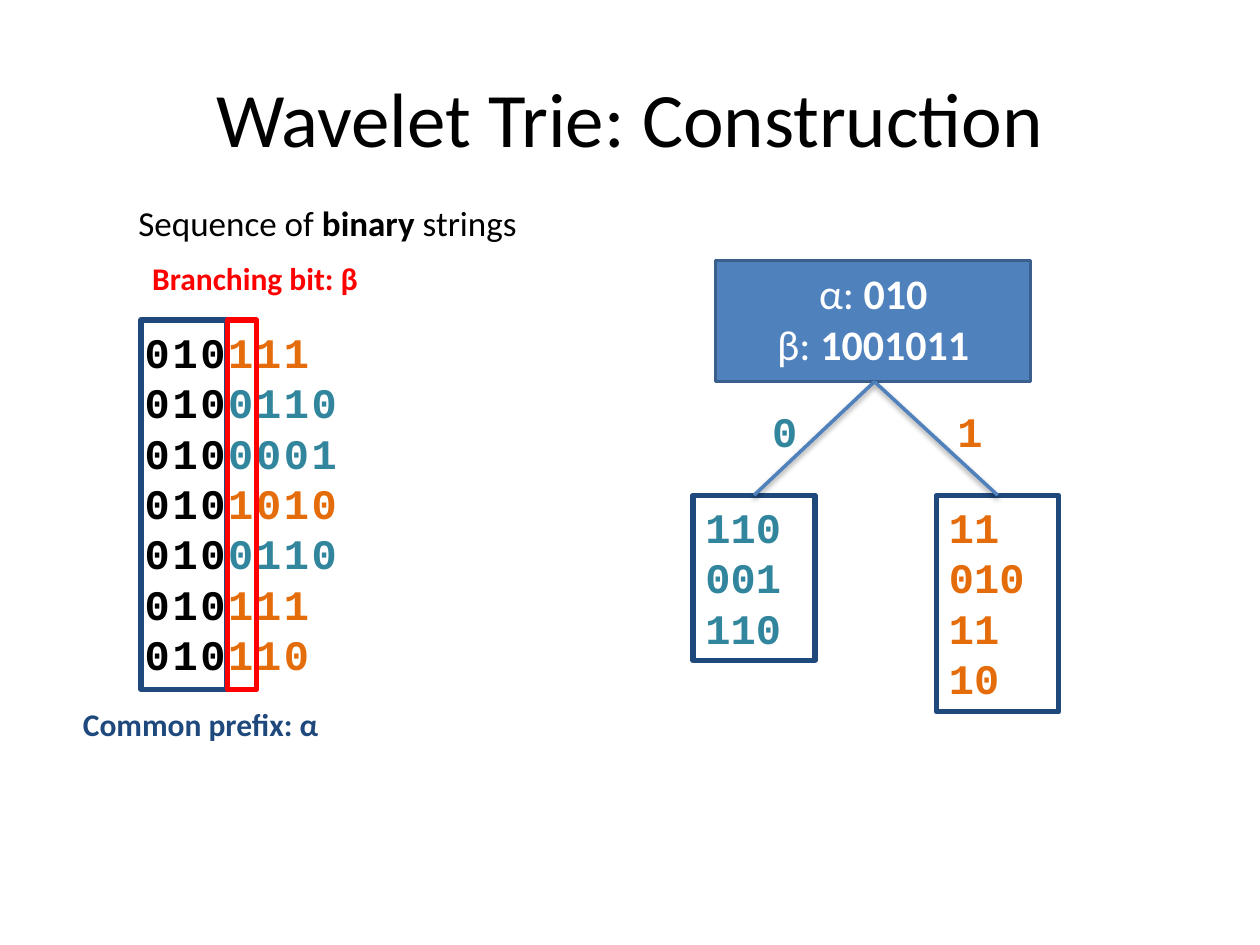
import pptx
import pptx.dml.color
import pptx.enum.shapes
import pptx.enum.text
import pptx.oxml
import pptx.oxml.ns
import pptx.util

Pt = pptx.util.Pt
RGBColor = pptx.dml.color.RGBColor
ALIGN = pptx.enum.text.PP_ALIGN
ANCHOR = pptx.enum.text.MSO_ANCHOR
AUTO_SIZE = pptx.enum.text.MSO_AUTO_SIZE

BLACK = RGBColor(0x00, 0x00, 0x00)
WHITE = RGBColor(0xFF, 0xFF, 0xFF)
RED = RGBColor(0xFF, 0x00, 0x00)
NAVY = RGBColor(0x1F, 0x49, 0x7D)
BLUE = RGBColor(0x4F, 0x81, 0xBD)
DARK_BLUE = RGBColor(0x3A, 0x5F, 0x8C)
TEAL = RGBColor(0x31, 0x85, 0x9C)
ORANGE = RGBColor(0xE4, 0x6C, 0x0A)
BIT_COLORS = {"0": TEAL, "1": ORANGE}

BITS = {"name": "Courier New", "size": Pt(24), "bold": True}
CAPTION = {"name": "Calibri", "size": Pt(18), "bold": True}
HEADING = {"name": "Calibri", "size": Pt(20), "bold": False}
NODE = {"name": "Calibri", "size": Pt(24), "bold": False}
TITLE = {"name": "Calibri", "size": Pt(44), "bold": False}

STRINGS = ["010111", "0100110", "0100001", "0101010", "0100110", "010111", "010110"]
PREFIX = "010"

LINE_SHADOW = (
    f'<a:effectLst {pptx.oxml.ns.nsdecls("a")}>'
    '<a:outerShdw blurRad="40000" dist="20000" dir="5400000" rotWithShape="0">'
    '<a:srgbClr val="000000"><a:alpha val="38000"/></a:srgbClr>'
    '</a:outerShdw></a:effectLst>'
)


def write(shape, paragraphs, font_format, align=ALIGN.LEFT, spacing=None, **frame_format):
    frame = shape.text_frame
    settings = {"word_wrap": True, "auto_size": AUTO_SIZE.SHAPE_TO_FIT_TEXT,
                "vertical_anchor": ANCHOR.TOP, **frame_format}
    for key, value in settings.items():
        setattr(frame, key, value)
    for index, runs in enumerate(paragraphs):
        paragraph = frame.add_paragraph() if index else frame.paragraphs[0]
        paragraph.alignment = align
        for text, color, *bold in runs:
            if text == "\n":
                paragraph.add_line_break()
                continue
            run = paragraph.add_run()
            run.text = text
            for key, value in font_format.items():
                setattr(run.font, key, value)
            run.font.color.rgb = color
            if bold:
                run.font.bold = bold[0]
            if spacing:
                run._r.get_or_add_rPr().set("spc", str(spacing))


def add_text(slide, box, paragraphs, font_format, **options):
    label = slide.shapes.add_textbox(*map(Pt, box))
    write(label, paragraphs, font_format, **options)


def add_frame(slide, box, line_color, line_width=3, fill_color=None):
    frame = slide.shapes.add_shape(
        pptx.enum.shapes.MSO_SHAPE.RECTANGLE, *map(Pt, box))
    frame.shadow.inherit = False
    if fill_color is None:
        frame.fill.background()
    else:
        frame.fill.solid()
        frame.fill.fore_color.rgb = fill_color
    frame.line.color.rgb = line_color
    frame.line.width = Pt(line_width)
    return frame


def add_branch(slide, start, end):
    branch = slide.shapes.add_connector(
        pptx.enum.shapes.MSO_CONNECTOR.STRAIGHT, *map(Pt, (*start, *end)))
    branch.line.color.rgb = BLUE
    branch.line.width = Pt(2)
    branch._element.spPr.append(pptx.oxml.parse_xml(LINE_SHADOW))


def build_title(slide, box):
    add_text(slide, box, [[("Wavelet Trie: Construction", BLACK)]], TITLE,
             align=ALIGN.CENTER, vertical_anchor=ANCHOR.MIDDLE, auto_size=AUTO_SIZE.NONE)


def build_sequence(slide, box):
    left, top, width, height = box
    rows = [[(PREFIX, BLACK), (string[len(PREFIX):], BIT_COLORS[string[len(PREFIX)]])]
            for string in STRINGS]
    add_text(slide, box, rows, BITS, spacing=150)
    add_frame(slide, (left + 5, top, 49, height), NAVY)
    add_text(slide, (left - 35.3, top + height + 5.6, 151.2, 29),
             [[("Common prefix: α", NAVY)]], CAPTION, word_wrap=False)
    add_frame(slide, (left + 54.6, top, 16.6, height), RED)
    add_text(slide, (left + 4.3, top - 38.2, 134, 29),
             [[("Branching bit: β", RED)]], CAPTION, word_wrap=False)
    add_text(slide, (left - 3.6, top - 71.3, 232.6, 31.7),
             [[("Sequence of ", BLACK), ("binary", BLACK, True), (" strings", BLACK)]],
             HEADING, word_wrap=False)


def build_trie(slide, box):
    left, top, width, height = box
    root_height, leaf_width, leaf_top = 69.1, 69.8, top + 134
    root = add_frame(slide, (left + 13, top, 180, root_height), DARK_BLUE, 2, BLUE)
    write(root, [[("α:", WHITE), (" 010", WHITE, True), ("\n", WHITE),
                  ("β:", WHITE), (" 1001011", WHITE, True)]], NODE,
          align=ALIGN.CENTER, vertical_anchor=ANCHOR.MIDDLE,
          auto_size=AUTO_SIZE.NONE, margin_top=0)
    fork = (left + 103.7, top + root_height)
    children = [("0", left, left + 38.2, 94.3),
                ("1", left + width - leaf_width, left + 144, 123.8)]
    for bit, leaf_left, bit_left, leaf_height in children:
        color = BIT_COLORS[bit]
        suffixes = [string[len(PREFIX) + 1:] for string in STRINGS
                    if string[len(PREFIX)] == bit]
        leaf = add_frame(slide, (leaf_left, leaf_top, leaf_width, leaf_height), NAVY)
        write(leaf, [[(suffix, color)] for suffix in suffixes], BITS)
        add_branch(slide, fork, (leaf_left + leaf_width / 2, leaf_top))
        add_text(slide, (bit_left, top + 79.2, 28.8, 36), [[(bit, color)]], BITS,
                 word_wrap=False)


def main():
    presentation = pptx.Presentation()
    presentation.slide_width = Pt(720)
    presentation.slide_height = Pt(540)
    slide = presentation.slides.add_slide(presentation.slide_layouts[6])
    build_title(slide, (36, 21.6, 648, 90))
    build_sequence(slide, (75.6, 182.9, 138.2, 211))
    build_trie(slide, (396, 149, 209, 257.8))
    presentation.save("out.pptx")


if __name__ == "__main__":
    main()
